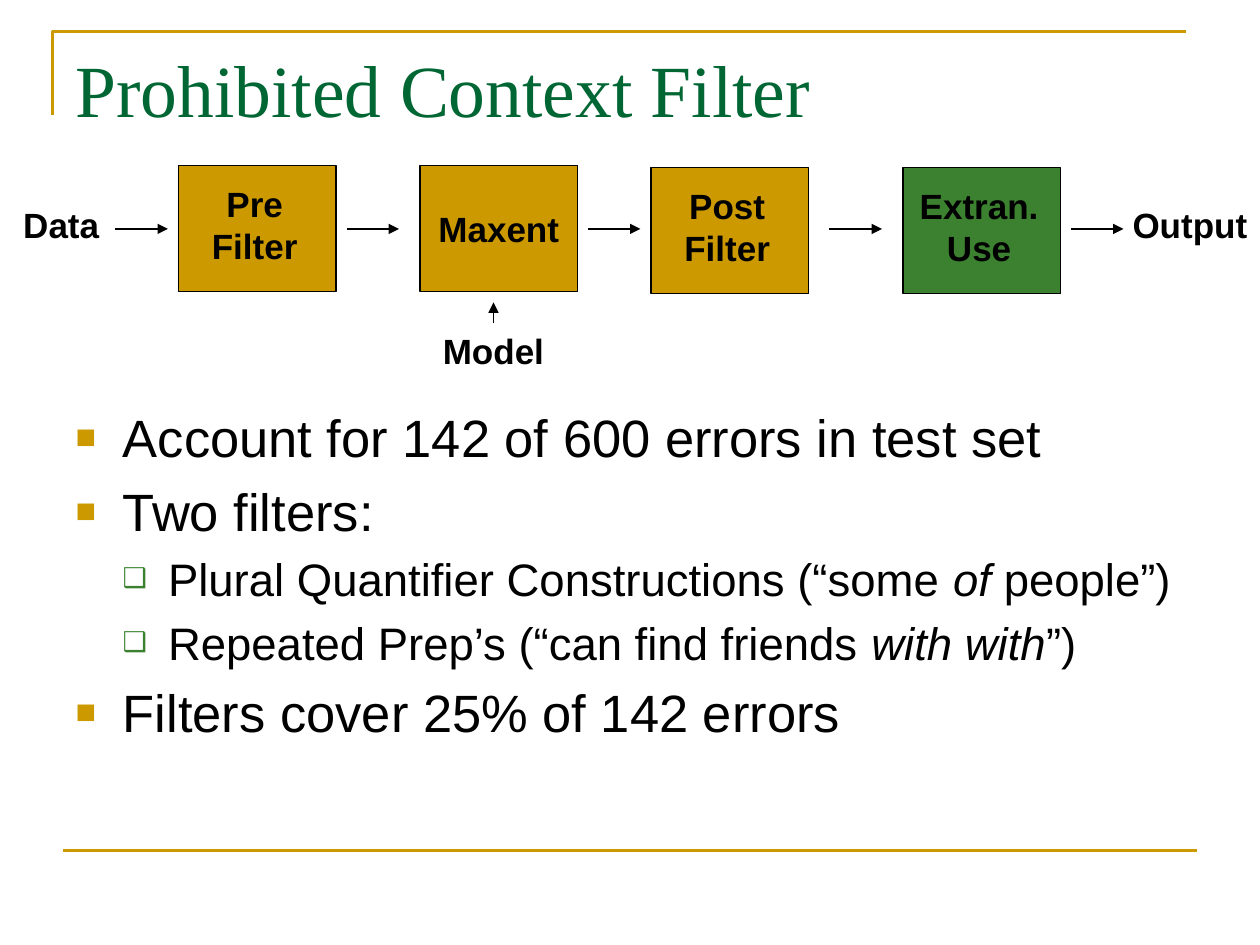
from lxml import etree
from pptx import Presentation
from pptx.dml.color import RGBColor
from pptx.enum import shapes as kinds, text as txt
from pptx.oxml.ns import qn
from pptx.util import Pt

GOLD, GREEN, TITLE_GREEN, BLACK = "CC9900", "3B812F", "006633", "000000"


def color(hex_value):
    return RGBColor.from_string(hex_value)


def style_font(font, **values):
    font.color.rgb = color(values.pop("color", BLACK))
    for name, value in values.items():
        setattr(font, name, value)


def set_frame(frame, **values):
    for name, value in values.items():
        setattr(frame, name, value)


def place(shape, left, top, width, height):
    box = {"left": left, "top": top, "width": width, "height": height}
    for name, value in box.items():
        setattr(shape, name, Pt(value))


def add_line(slide, start, end, line_color=BLACK, weight=0.75, arrow=False):
    line = slide.shapes.add_connector(
        kinds.MSO_CONNECTOR.STRAIGHT, *map(Pt, (*start, *end)))
    line.line.color.rgb = color(line_color)
    line.line.width = Pt(weight)
    if arrow:
        outline = line._element.spPr.find(qn("a:ln"))
        etree.SubElement(outline, qn("a:tailEnd"), type="triangle")
    etree.SubElement(line._element.spPr, qn("a:effectLst"))


def add_frame_lines(slide, left, top, width, height):
    """Corner rule at the top left and a rule along the bottom."""
    builder = slide.shapes.build_freeform(Pt(left), Pt(top + 48))
    builder.add_line_segments(
        [(Pt(left), Pt(top)), (Pt(left + width), Pt(top))], close=False)
    corner = builder.convert_to_shape()
    corner.shadow.inherit = False
    corner.fill.background()
    corner.line.color.rgb = color(GOLD)
    corner.line.width = Pt(1.5)
    bottom = top + height
    add_line(slide, (left + 6, bottom), (left + 6 + width, bottom), GOLD, 1.5)


def add_title(slide, wording, box):
    title = slide.shapes.title
    place(title, *box)
    frame = title.text_frame
    set_frame(frame, vertical_anchor=txt.MSO_ANCHOR.TOP, margin_top=Pt(3.6),
              auto_size=txt.MSO_AUTO_SIZE.NONE)
    paragraph = frame.paragraphs[0]
    paragraph.alignment = txt.PP_ALIGN.LEFT
    run = paragraph.add_run()
    run.text = wording
    style_font(run.font, name="Times New Roman", size=Pt(42), color=TITLE_GREEN)


def write_label(frame, wording):
    frame.word_wrap = False
    frame.text = wording
    for paragraph in frame.paragraphs:
        paragraph.alignment = txt.PP_ALIGN.CENTER
        style_font(paragraph.font, name="Arial", size=Pt(20), bold=True)


def add_label(slide, wording, center, top, width):
    height = 7 + 24 * len(wording.split("\n"))
    label = slide.shapes.add_textbox(
        *map(Pt, (center - width / 2, top, width, height)))
    write_label(label.text_frame, wording)
    set_frame(label.text_frame, margin_left=Pt(3), margin_right=Pt(3),
              auto_size=txt.MSO_AUTO_SIZE.SHAPE_TO_FIT_TEXT)


def add_stage(slide, wording, fill, left, top, label_width):
    stage = slide.shapes.add_shape(
        kinds.MSO_SHAPE.RECTANGLE, *map(Pt, (left, top, 90, 72)))
    stage.shadow.inherit = False
    stage.fill.solid()
    stage.fill.fore_color.rgb = color(fill)
    stage.line.color.rgb = color(BLACK)
    stage.line.width = Pt(0.75)
    if label_width:
        add_label(slide, wording, left + 43.5, top + 6, label_width)
    else:
        stage.text_frame.vertical_anchor = txt.MSO_ANCHOR.MIDDLE
        write_label(stage.text_frame, wording)


def add_pipeline(slide, left, top):
    stages = [("Pre\nFilter", GOLD, 96, 0, 63), ("Maxent", GOLD, 234, 0, None),
              ("Post\nFilter", GOLD, 366, 1, 63), ("Extran.\nUse", GREEN, 510, 1, 82)]
    for wording, fill, x, y, label_width in stages:
        add_stage(slide, wording, fill, left + x, top + y, label_width)
    middle = top + 36
    for x in (60, 192, 330, 468, 606):
        add_line(slide, (left + x, middle), (left + x + 30, middle), arrow=True)
    add_line(slide, (left + 276, top + 90), (left + 276, top + 78), arrow=True)
    for wording, center, y, width in (("Data", 29, 18, 58), ("Output", 674, 18, 80),
                                      ("Model", 276, 90, 72)):
        add_label(slide, wording, left + center, top + y, width)


def set_bullet(paragraph, char, bullet_color, percent, margin, indent):
    props = paragraph._p.get_or_add_pPr()
    props.set("marL", str(Pt(margin)))
    props.set("indent", str(Pt(-indent)))
    tint = etree.SubElement(props, qn("a:buClr"))
    etree.SubElement(tint, qn("a:srgbClr"), val=bullet_color)
    etree.SubElement(props, qn("a:buSzPct"), val=str(percent * 1000))
    etree.SubElement(props, qn("a:buFont"), typeface="Arial")
    etree.SubElement(props, qn("a:buChar"), char=char)


def add_findings(slide, box):
    levels = [
        {"size": 30, "space": 6, "bullet": ("■", GOLD, 65, 27, 27)},
        {"size": 26, "space": 5.2, "bullet": ("❑", GREEN, 60, 52.8, 26)},
    ]
    # Every second piece of a line is italic.
    findings = [
        (0, ["Account for 142 of 600 errors in test set"]),
        (0, ["Two filters:"]),
        (1, ["Plural Quantifier Constructions (“some ", "of ", "people”)"]),
        (1, ["Repeated Prep’s (“can find friends ", "with with", "”)"]),
        (0, ["Filters cover 25% of 142 errors"]),
    ]
    body = slide.placeholders[1]
    place(body, *box)
    frame = body.text_frame
    set_frame(frame, vertical_anchor=txt.MSO_ANCHOR.TOP, margin_top=Pt(3.6),
              auto_size=txt.MSO_AUTO_SIZE.NONE)
    for row, (level, pieces) in enumerate(findings):
        paragraph = frame.add_paragraph() if row else frame.paragraphs[0]
        look = levels[level]
        paragraph.level = level
        paragraph.space_before = Pt(look["space"] if row else 0)
        set_bullet(paragraph, *look["bullet"])
        for index, piece in enumerate(pieces):
            run = paragraph.add_run()
            run.text = piece
            style_font(run.font, name="Arial", size=Pt(look["size"]),
                       italic=index % 2 == 1)


def main():
    deck = Presentation()
    deck.slide_width, deck.slide_height = Pt(720), Pt(540)
    slide = deck.slides.add_slide(deck.slide_layouts[1])
    add_frame_lines(slide, 30, 18, 648, 468)
    add_title(slide, "Prohibited Context Filter", (36, 21.6, 648, 90))
    add_findings(slide, (36, 228, 648, 255))
    add_pipeline(slide, 6, 94.8)
    deck.save("out.pptx")


if __name__ == "__main__":
    main()
